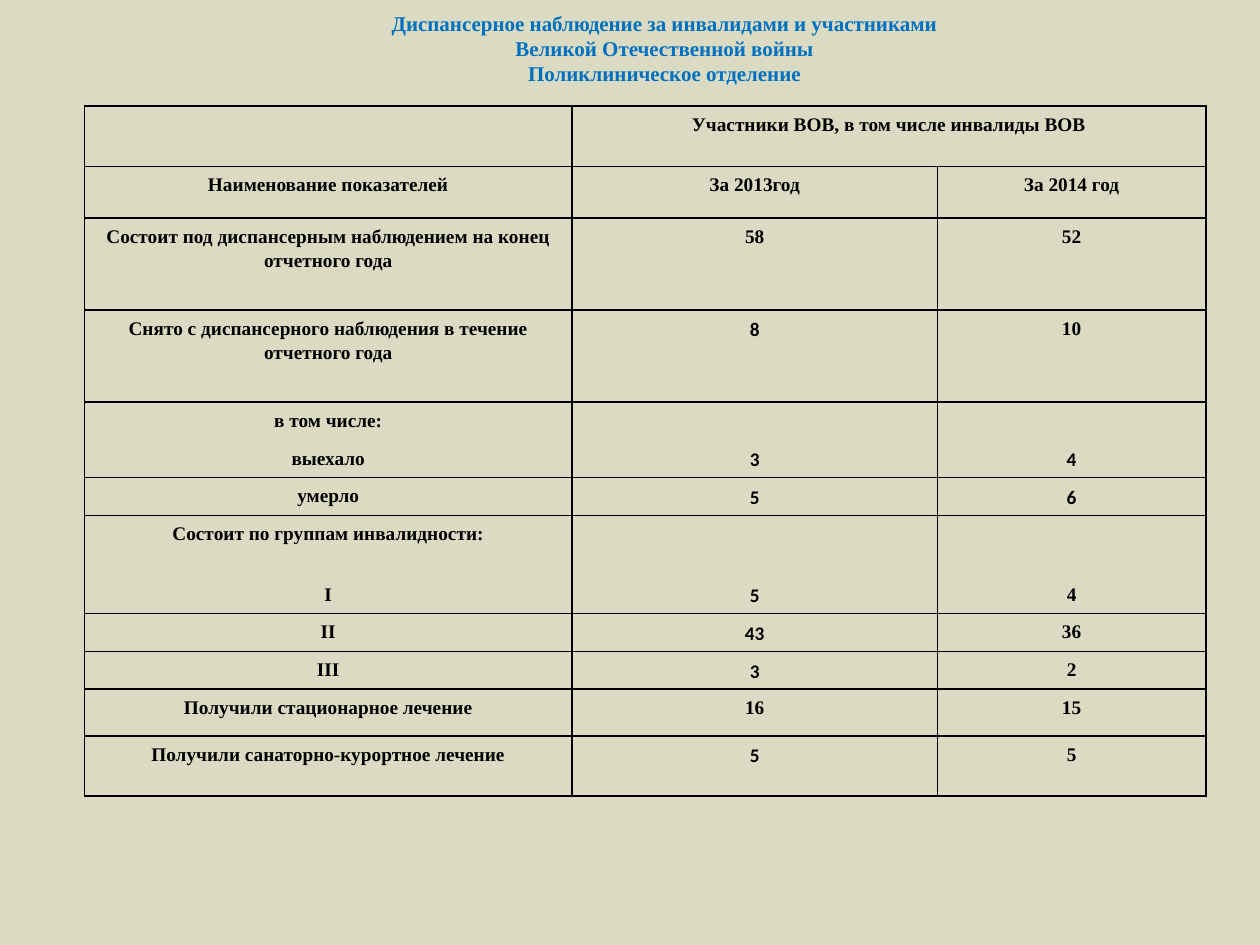
from dataclasses import dataclass

from lxml.etree import SubElement
from pptx import Presentation
from pptx.dml.color import RGBColor
from pptx.enum.text import MSO_ANCHOR, MSO_AUTO_SIZE, PP_ALIGN
from pptx.oxml.ns import qn
from pptx.util import Inches, Pt


@dataclass(frozen=True)
class Theme:
    """Colours, fonts and type sizes of the slide."""
    background: str = "DBDAC2"
    title: str = "0070C0"
    ink: str = "000000"
    serif: str = "Times New Roman"
    sans: str = "Calibri"
    title_size: int = 12
    table_size: int = 11
    border_width: int = 1


TITLE_LINES = [
    "Диспансерное наблюдение за инвалидами и участниками",
    "Великой Отечественной войны",
    "Поликлиническое отделение",
]
ROWS = [
    (0.48, "", "Участники ВОВ, в том числе инвалиды ВОВ", ""),
    (0.41, "Наименование показателей", "За 2013год", "За 2014 год"),
    (0.73, "Состоит под диспансерным наблюдением на конец отчетного года", "58", "52"),
    (0.73, "Снято с диспансерного наблюдения в течение отчетного года", "8", "10"),
    (0.3, "в том числе:", "", ""),
    (0.3, "выехало", "3", "4"),
    (0.3, "умерло", "5", "6"),
    (0.48, "Состоит по группам инвалидности:", "", ""),
    (0.3, "I", "5", "4"),
    (0.3, "II", "43", "36"),
    (0.3, "III", "3", "2"),
    (0.37, "Получили стационарное лечение", "16", "15"),
    (0.48, "Получили санаторно-курортное лечение", "5", "5"),
]
COLUMN_WIDTHS = [3.87, 2.9, 2.13]
GROUP_HEADING_ROWS = {4, 7}
SANS_CELLS = {(row, 1) for row in (3, 5, 6, 8, 9, 10, 12)} | {(5, 2), (6, 2)}


class SlideBuilder:
    """Holds the theme and the current slide and adds elements to it."""

    def __init__(self, slide, theme):
        """Store the slide and paint its background."""
        self.slide = slide
        self.theme = theme
        fill = slide.background.fill
        fill.solid()
        fill.fore_color.rgb = RGBColor.from_string(theme.background)

    def format_paragraph(self, paragraph, font_name, size, color):
        """Centre a paragraph and style its runs in bold."""
        paragraph.alignment = PP_ALIGN.CENTER
        for run in paragraph.runs:
            run.font.name = font_name
            run.font.size = Pt(size)
            run.font.bold = True
            run.font.color.rgb = RGBColor.from_string(color)

    def add_title(self, lines, left, top, width, height):
        """Place the title placeholder and fill it line by line."""
        title = self.slide.shapes.title
        title.left, title.top = Inches(left), Inches(top)
        title.width, title.height = Inches(width), Inches(height)
        frame = title.text_frame
        frame.text = "\n".join(lines)
        frame.word_wrap = False
        frame.auto_size = MSO_AUTO_SIZE.NONE
        frame.vertical_anchor = MSO_ANCHOR.TOP
        for paragraph in frame.paragraphs:
            paragraph.space_before = Pt(0)
            self.format_paragraph(paragraph, self.theme.serif,
                                  self.theme.title_size, self.theme.title)

    def set_borders(self, cell, hidden):
        """Draw the cell's borders, leaving out the hidden sides."""
        properties = cell._tc.get_or_add_tcPr()
        for index, side in enumerate("LRTB"):
            line = SubElement(properties, qn(f"a:ln{side}"),
                              w=str(Pt(self.theme.border_width)))
            properties.insert(index, line)
            if side in hidden:
                SubElement(line, qn("a:noFill"))
            else:
                fill = SubElement(line, qn("a:solidFill"))
                SubElement(fill, qn("a:srgbClr"), val=self.theme.ink)

    def fill_cell(self, cell, text, font_name, hidden):
        """Write and format one table cell."""
        cell.fill.background()
        cell.margin_left = cell.margin_right = Inches(0.03)
        cell.margin_top = cell.margin_bottom = Inches(0.04)
        paragraph = cell.text_frame.paragraphs[0]
        paragraph.text = text
        paragraph.line_spacing = 1.15
        self.format_paragraph(paragraph, font_name,
                              self.theme.table_size, self.theme.ink)
        if not text:
            SubElement(paragraph._p, qn("a:endParaRPr"),
                       sz=str(self.theme.table_size * 100))
        self.set_borders(cell, hidden)

    def add_table(self, rows, widths, left, top):
        """Add the table of indicators with its merged heading."""
        height = sum(row[0] for row in rows)
        table = self.slide.shapes.add_table(
            len(rows), len(widths), Inches(left), Inches(top),
            Inches(sum(widths)), Inches(height)).table
        table.first_row = table.horz_banding = False
        for column, width in zip(table.columns, widths):
            column.width = Inches(width)
        for row_index, (row_height, *texts) in enumerate(rows):
            table.rows[row_index].height = Inches(row_height)
            hidden = ("B" if row_index in GROUP_HEADING_ROWS else
                      "T" if row_index - 1 in GROUP_HEADING_ROWS else "")
            for column_index, text in enumerate(texts):
                is_sans = (row_index, column_index) in SANS_CELLS
                font_name = self.theme.sans if is_sans else self.theme.serif
                self.fill_cell(table.cell(row_index, column_index),
                               text, font_name, hidden)
        table.cell(0, 1).merge(table.cell(0, 2))


def main():
    """Build and save the presentation."""
    presentation = Presentation()
    presentation.slide_width = Inches(10)
    presentation.slide_height = Inches(7.5)
    slide = presentation.slides.add_slide(presentation.slide_layouts[5])
    builder = SlideBuilder(slide, Theme())
    builder.add_title(TITLE_LINES, 2.99, 0.03, 4.57, 1.01)
    builder.add_table(ROWS, COLUMN_WIDTHS, 0.67, 0.84)
    presentation.save("out.pptx")


if __name__ == "__main__":
    main()
